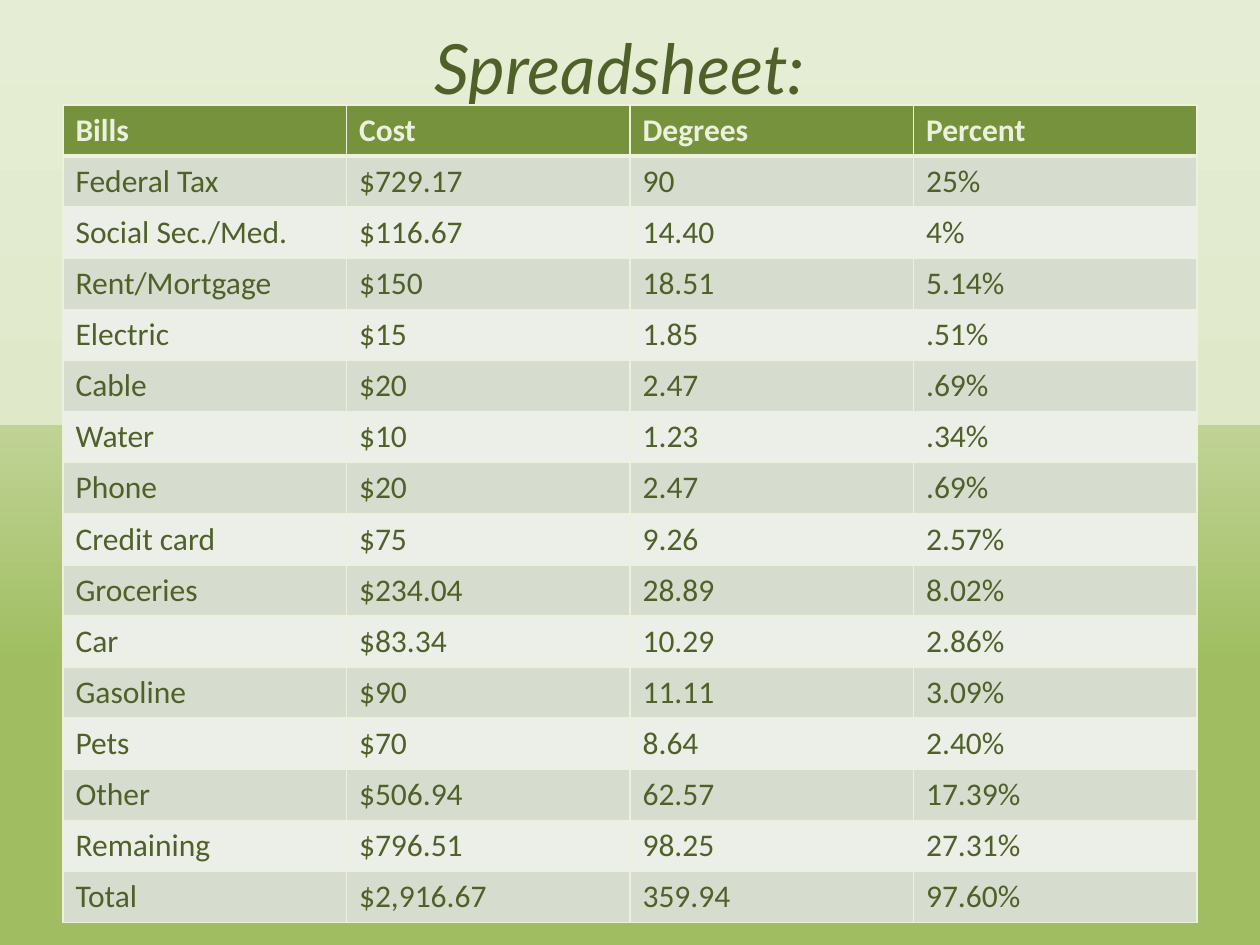
from collections import namedtuple
from dataclasses import dataclass

from lxml.etree import SubElement
from pptx import Presentation
from pptx.dml.color import RGBColor
from pptx.enum.text import MSO_ANCHOR, PP_ALIGN
from pptx.oxml.ns import qn
from pptx.util import Pt

Box = namedtuple("Box", "left top width height")


@dataclass(frozen=True)
class Theme:
    ink: str = "4F6128"
    pale: str = "EBF1DD"
    header: str = "76923C"
    bands: tuple = ("D6DCCE", "ECEEE8")
    backdrop: tuple = ((0, "E5EDD4"), (45, "DFE9CA"), (45, "C0D395"), (70, "A0BE61"))
    title_font: str = "Lato"
    body_font: str = "Calibri"
    title_size: float = 39.6
    body_size: float = 18
    rule: float = 1
    header_rule: float = 3


THEME = Theme()

BILLS = (
    ("Bills", "Cost", "Degrees", "Percent"),
    ("Federal Tax", "$729.17", "90", "25%"),
    ("Social Sec./Med.", "$116.67", "14.40", "4%"),
    ("Rent/Mortgage", "$150", "18.51", "5.14%"),
    ("Electric", "$15", "1.85", ".51%"),
    ("Cable", "$20", "2.47", ".69%"),
    ("Water", "$10", "1.23", ".34%"),
    ("Phone", "$20", "2.47", ".69%"),
    ("Credit card", "$75", "9.26", "2.57%"),
    ("Groceries", "$234.04", "28.89", "8.02%"),
    ("Car", "$83.34", "10.29", "2.86%"),
    ("Gasoline", "$90", "11.11", "3.09%"),
    ("Pets", "$70", "8.64", "2.40%"),
    ("Other", "$506.94", "62.57", "17.39%"),
    ("Remaining", "$796.51", "98.25", "27.31%"),
    ("Total", "$2,916.67", "359.94", "97.60%"),
)


def paint_background(page):
    fill = page.background.fill
    fill.gradient()
    fill.gradient_angle = 270
    stops = page.element.find(f".//{qn('a:gsLst')}")
    for stop in list(stops):
        stops.remove(stop)
    for percent, color in THEME.backdrop:
        stop = SubElement(stops, qn("a:gs"), pos=str(percent * 1000))
        SubElement(stop, qn("a:srgbClr"), val=color)


def style_span(span, font, size, color):
    span.font.name = font
    span.font.size = Pt(size)
    span.font.color.rgb = RGBColor.from_string(color)


def add_title(page, box, text):
    frame = page.shapes.add_textbox(*map(Pt, box)).text_frame
    frame.word_wrap = True
    frame.vertical_anchor = MSO_ANCHOR.MIDDLE
    frame.text = text
    para = frame.paragraphs[0]
    para.alignment = PP_ALIGN.CENTER
    span = para.runs[0]
    style_span(span, THEME.title_font, THEME.title_size, THEME.ink)
    span.font.italic = True
    span.font.underline = True


def add_borders(cell, top, bottom):
    properties = cell._tc.get_or_add_tcPr()
    widths = {"lnL": THEME.rule, "lnR": THEME.rule, "lnT": top, "lnB": bottom}
    for side, width in widths.items():
        line = SubElement(properties, qn(f"a:{side}"), w=str(Pt(width)))
        fill = SubElement(line, qn("a:solidFill"))
        SubElement(fill, qn("a:srgbClr"), val=THEME.pale)


def style_cell(cell, row):
    is_header = row == 0
    add_borders(
        cell,
        top=THEME.header_rule if row == 1 else THEME.rule,
        bottom=THEME.header_rule if is_header else THEME.rule,
    )
    cell.fill.solid()
    fill_color = THEME.header if is_header else THEME.bands[(row - 1) % 2]
    cell.fill.fore_color.rgb = RGBColor.from_string(fill_color)
    span = cell.text_frame.paragraphs[0].runs[0]
    style_span(span, THEME.body_font, THEME.body_size, THEME.pale if is_header else THEME.ink)
    span.font.bold = is_header


def add_bills_table(page, box, records):
    row_count, column_count = len(records), len(records[0])
    table = page.shapes.add_table(row_count, column_count, *map(Pt, box)).table
    for column in table.columns:
        column.width = Pt(box.width / column_count)
    for row, record in enumerate(records):
        table.rows[row].height = Pt(box.height / row_count)
        for column, text in enumerate(record):
            cell = table.cell(row, column)
            cell.text = text
            style_cell(cell, row)


def main():
    deck = Presentation()
    deck.slide_width, deck.slide_height = Pt(720), Pt(540)
    page = deck.slides.add_slide(deck.slide_layouts[6])
    paint_background(page)
    add_title(page, Box(60, 12, 588, 52), "Spreadsheet:")
    add_bills_table(page, Box(36, 60, 648, 467.2), BILLS)
    deck.save("out.pptx")


if __name__ == "__main__":
    main()
